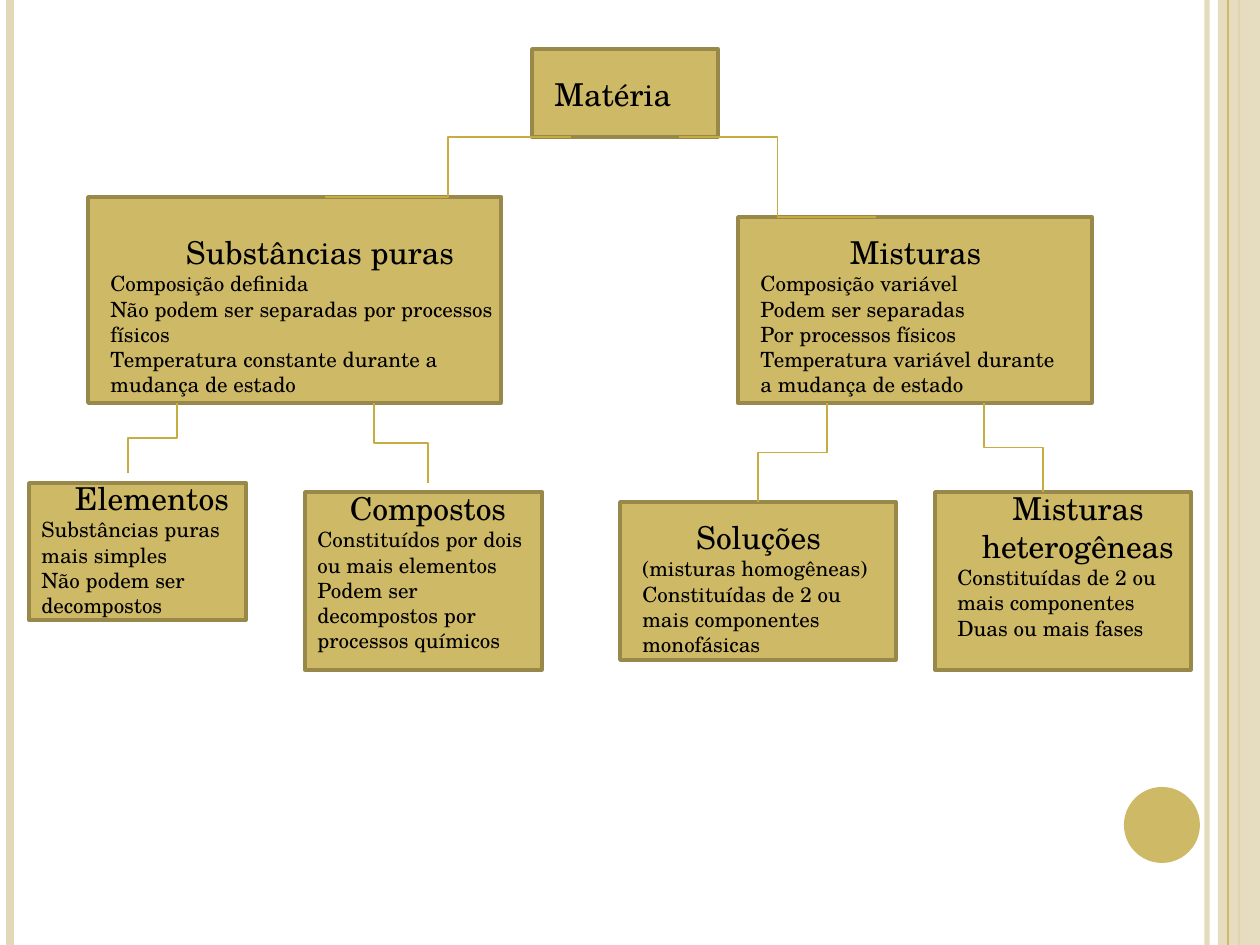
from dataclasses import dataclass

from lxml import etree
from pptx import Presentation
from pptx import util as u
from pptx.dml.color import RGBColor
from pptx.enum import shapes, text
from pptx.oxml.ns import qn

EMU_PER_PX = 914400 / 126
WIDTH, HEIGHT = 1260, 945


@dataclass(frozen=True)
class Theme:
    font: str = "TeX Gyre Schola"
    gold: str = "CEB966"
    sand: str = "E3D9B8"
    border: str = "98894B"
    link: str = "C7AC41"
    ink: str = "000000"
    title_size: int = 18
    body_size: int = 12
    border_width: int = 2
    link_width: int = 1


THEME = Theme()

BOXES = [
    (738, 217, 354, 186),
    (532, 49, 186, 88),
    (88, 197, 413, 206),
    (29, 483, 217, 137),
    (305, 492, 237, 178),
    (620, 502, 276, 158),
    (935, 492, 256, 178),
]

LABELS = [
    ((542, 69, 168, 50), "Matéria", []),
    ((98, 227, 444, 178), "Substâncias puras", [
        "Composição definida",
        "Não podem ser separadas por processos físicos",
        "Temperatura constante durante a mudança de estado",
    ]),
    ((29, 473, 246, 152), "Elementos", [
        "Substâncias puras mais simples",
        "Não podem ser decompostos",
    ]),
    ((305, 483, 246, 178), "Compostos", [
        "Constituídos por dois ou mais elementos",
        "Podem ser decompostos por processos químicos",
    ]),
    ((748, 227, 335, 217), "Misturas", [
        "Composição variável",
        "Podem ser separadas",
        "Por processos físicos",
        "Temperatura variável durante a mudança de estado",
    ]),
    ((630, 512, 266, 152), "Soluções ", [
        "(misturas homogêneas)",
        "Constituídas de 2 ou mais componentes",
        "monofásicas",
    ]),
    ((945, 483, 266, 165), "Misturas heterogêneas", [
        "Constituídas de 2 ou mais componentes",
        "Duas ou mais fases",
    ]),
]

DOWNWARD_LINKS = [
    ((984, 403), (1043, 492)),
    ((827, 403), (758, 502)),
    ((374, 403), (428, 483)),
    ((177, 403), (128, 473)),
]
SIDEWAYS_LINKS = [
    ((679, 137), (876, 217)),
    ((571, 137), (325, 197)),
]


def px(*lengths):
    return [u.Emu(round(length * EMU_PER_PX)) for length in lengths]


def set_alpha(fill_parent, percent):
    color = next(fill_parent.iter(qn("a:srgbClr")))
    etree.SubElement(color, qn("a:alpha")).set("val", str(percent * 1000))


def add_filled(slide, kind, bounds, color, border=None, alpha=None):
    shape = slide.shapes.add_shape(kind, *px(*bounds))
    shape.shadow.inherit = False
    shape.fill.solid()
    shape.fill.fore_color.rgb = RGBColor.from_string(color)
    if alpha:
        set_alpha(shape.element.spPr, alpha)
    if border:
        shape.line.color.rgb = RGBColor.from_string(border)
        shape.line.width = u.Pt(THEME.border_width)
    else:
        shape.line.fill.background()


def add_line(slide, kind, start, end, color, width):
    connector = slide.shapes.add_connector(kind, *px(*start, *end))
    connector.line.color.rgb = RGBColor.from_string(color)
    connector.line.width = u.Pt(width)
    etree.SubElement(connector.element.spPr, qn("a:effectLst"))
    return connector


def add_edge_line(slide, x, color, width, alpha=None):
    line = add_line(slide, shapes.MSO_CONNECTOR.STRAIGHT, (x, 0), (x, HEIGHT), color, width)
    if alpha:
        set_alpha(line.element.spPr, alpha)


def add_elbow(slide, start, end):
    return add_line(slide, shapes.MSO_CONNECTOR.ELBOW, start, end, THEME.link, THEME.link_width)


def add_downward_elbow(slide, start, end):
    (x1, y1), (x2, y2) = start, end
    center_x, center_y = (x1 + x2) / 2, (y1 + y2) / 2
    half_run, half_rise = (y2 - y1) / 2, abs(x2 - x1) / 2
    goes_right = x2 > x1
    if goes_right:
        half_run = -half_run
    connector = add_elbow(
        slide,
        (center_x - half_run, center_y - half_rise),
        (center_x + half_run, center_y + half_rise),
    )
    degrees = 270 if goes_right else 90
    connector.element.spPr.find(qn("a:xfrm")).set("rot", str(degrees * 60000))


def add_text_run(paragraph, words, size):
    run = paragraph.add_run()
    run.text = words
    run.font.name = THEME.font
    run.font.size = u.Pt(size)
    run.font.color.rgb = RGBColor.from_string(THEME.ink)


def add_label(slide, bounds, title, details):
    frame = slide.shapes.add_textbox(*px(*bounds)).text_frame
    frame.word_wrap = True
    frame.auto_size = text.MSO_AUTO_SIZE.SHAPE_TO_FIT_TEXT
    heading = frame.paragraphs[0]
    if details:
        heading.alignment = text.PP_ALIGN.CENTER
    add_text_run(heading, title, THEME.title_size)
    for detail in details:
        add_text_run(frame.add_paragraph(), detail, THEME.body_size)


def add_decoration(slide):
    add_edge_line(slide, 1207, THEME.sand, 3, alpha=93)
    add_edge_line(slide, 10, THEME.sand, 4.5)
    add_edge_line(slide, 1239, THEME.gold, 1.5)
    band = (1218, 0, WIDTH - 1218, HEIGHT)
    add_filled(slide, shapes.MSO_SHAPE.RECTANGLE, band, THEME.sand, alpha=87)
    add_edge_line(slide, 1228, THEME.gold, 0.75)
    add_filled(slide, shapes.MSO_SHAPE.OVAL, (1124, 787, 76, 76), THEME.gold)


def main():
    presentation = Presentation()
    presentation.slide_width, presentation.slide_height = px(WIDTH, HEIGHT)
    slide = presentation.slides.add_slide(presentation.slide_layouts[6])
    add_decoration(slide)
    for bounds in BOXES:
        add_filled(slide, shapes.MSO_SHAPE.RECTANGLE, bounds, THEME.gold, THEME.border)
    for bounds, title, details in LABELS:
        add_label(slide, bounds, title, details)
    for start, end in DOWNWARD_LINKS:
        add_downward_elbow(slide, start, end)
    for start, end in SIDEWAYS_LINKS:
        add_elbow(slide, start, end)
    presentation.save("out.pptx")


if __name__ == "__main__":
    main()
